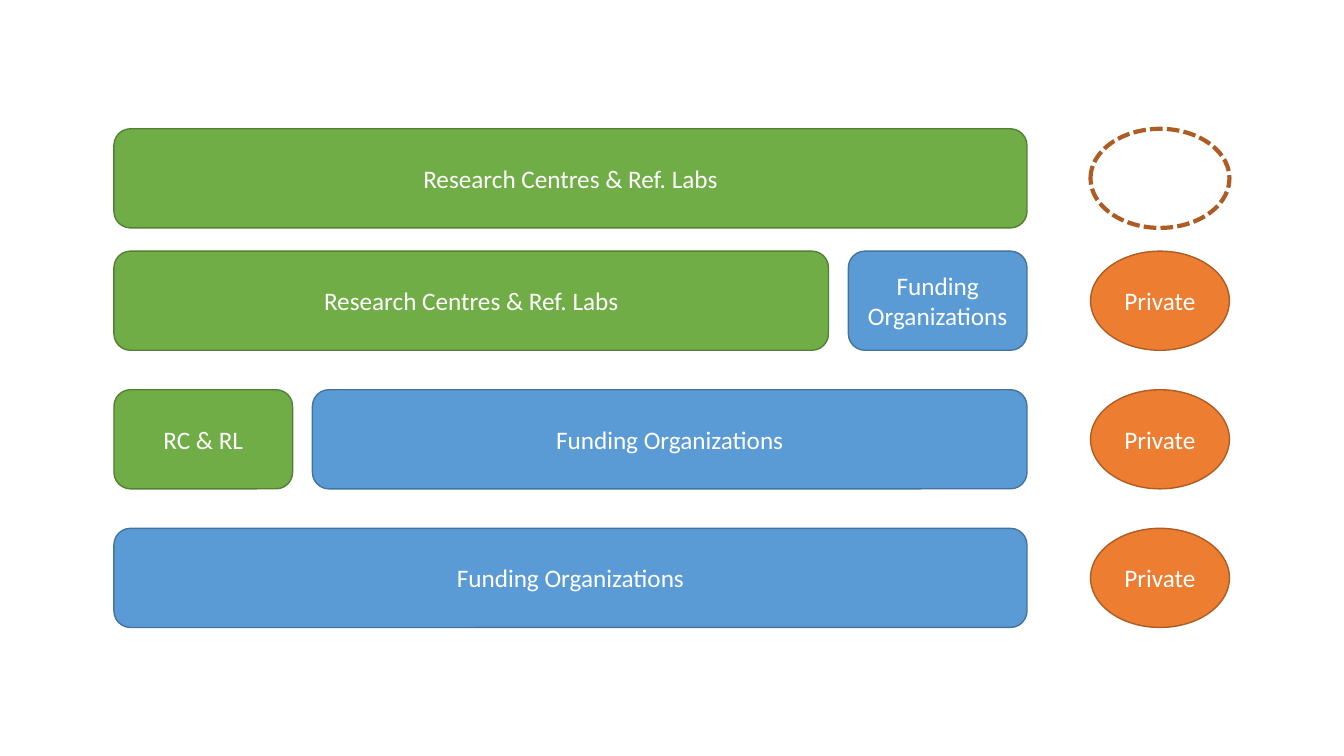
from dataclasses import dataclass

from pptx import Presentation
from pptx.dml.color import RGBColor
from pptx.enum.dml import MSO_LINE
from pptx.enum.shapes import MSO_SHAPE
from pptx.enum.text import MSO_ANCHOR, PP_ALIGN
from pptx.shapes.shapetree import GroupShapes
from pptx.util import Pt


@dataclass(frozen=True)
class Style:
    form: MSO_SHAPE
    fill: str | None
    line: str
    weight: float = 1
    dash: MSO_LINE | None = None


@dataclass(frozen=True)
class Block:
    text: str
    style: Style
    left: float
    width: float


@dataclass(frozen=True)
class Row:
    top: float
    blocks: tuple[Block, ...]


LABS = Style(MSO_SHAPE.ROUNDED_RECTANGLE, "70AD47", "538035")
FUNDS = Style(MSO_SHAPE.ROUNDED_RECTANGLE, "5B9BD5", "43739E")
FIRM = Style(MSO_SHAPE.OVAL, "ED7D31", "AF5C24")
NO_FIRM = Style(MSO_SHAPE.OVAL, None, "AF5C24", 3, MSO_LINE.SQUARE_DOT)

LEFT, FULL, SHORT, GAP, HIGH = 81.4, 652.2, 127.6, 14.2, 70.8
LONG = FULL - SHORT - GAP
LAB_TEXT = "Research Centres & Ref. Labs"
FUND_TEXT = "Funding Organizations"
PRIVATE = Block("Private", FIRM, 779, 99.2)

ROWS = (
    Row(92, (
        Block(LAB_TEXT, LABS, LEFT, FULL),
        Block("", NO_FIRM, PRIVATE.left, PRIVATE.width),
    )),
    Row(179.4, (
        Block(LAB_TEXT, LABS, LEFT, LONG),
        Block(FUND_TEXT, FUNDS, LEFT + LONG + GAP, SHORT),
        PRIVATE,
    )),
    Row(278.4, (
        Block("RC & RL", LABS, LEFT, SHORT),
        Block(FUND_TEXT, FUNDS, LEFT + SHORT + GAP, LONG),
        PRIVATE,
    )),
    Row(377.4, (Block(FUND_TEXT, FUNDS, LEFT, FULL), PRIVATE)),
)


def color(code: str) -> RGBColor:
    return RGBColor.from_string(code)


def apply(target: object, values: dict[str, object]) -> None:
    for name, value in values.items():
        setattr(target, name, value)


def draw(shapes: GroupShapes, block: Block, top: float) -> None:
    style = block.style
    shape = shapes.add_shape(
        style.form, Pt(block.left), Pt(top), Pt(block.width), Pt(HIGH)
    )
    shape.shadow.inherit = False
    if style.fill:
        shape.fill.solid()
        shape.fill.fore_color.rgb = color(style.fill)
    else:
        shape.fill.background()
    shape.line.color.rgb = color(style.line)
    apply(shape.line, {"width": Pt(style.weight), "dash_style": style.dash})
    if block.text:
        frame = shape.text_frame
        apply(frame, {
            "text": block.text,
            "word_wrap": True,
            "vertical_anchor": MSO_ANCHOR.MIDDLE,
        })
        para = frame.paragraphs[0]
        para.alignment = PP_ALIGN.CENTER
        font = para.runs[0].font
        apply(font, {"name": "Calibri", "size": Pt(18)})
        font.color.rgb = color("FFFFFF")


def main() -> None:
    deck = Presentation()
    apply(deck, {"slide_width": Pt(960), "slide_height": Pt(540)})
    slide = deck.slides.add_slide(deck.slide_layouts[6])
    group = slide.shapes.add_group_shape()
    for row in ROWS:
        for block in row.blocks:
            draw(group.shapes, block, row.top)
    deck.save("out.pptx")


if __name__ == "__main__":
    main()
